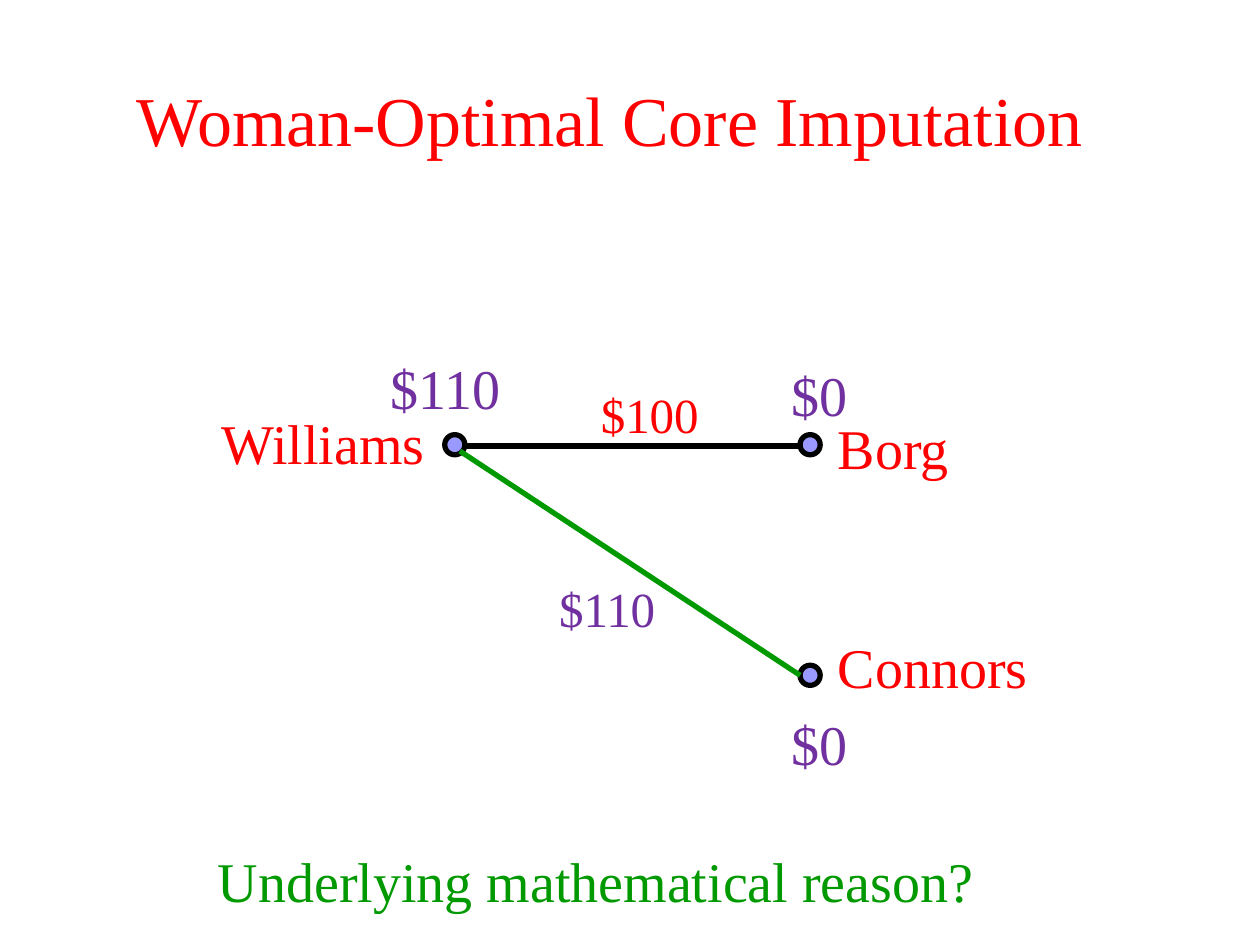
from pptx import Presentation
from pptx.dml.color import RGBColor
from pptx.enum.shapes import MSO_CONNECTOR as Connector, MSO_SHAPE as Shape
from pptx.enum.text import MSO_ANCHOR as Anchor, MSO_AUTO_SIZE as AutoSize, PP_ALIGN as Align
from pptx.oxml.ns import qn
from pptx.util import Inches, Pt
from lxml import etree

RED = RGBColor(0xFF, 0x00, 0x00)
PURPLE = RGBColor(0x70, 0x30, 0xA0)
GREEN = RGBColor(0x00, 0x99, 0x00)
BLACK = RGBColor(0x00, 0x00, 0x00)
LAVENDER = RGBColor(0x99, 0x99, 0xFF)


def write(frame, text, size=32, color=RED, align=Align.LEFT, font="Times New Roman"):
    para = frame.paragraphs[0]
    para.alignment = align
    span = para.add_run()
    span.text = text
    span.font.name = font
    span.font.size = Pt(size)
    span.font.color.rgb = color


class GraphPage:
    """Holds the slide and the style of its graph."""

    node_size = 0.16
    line_width = Pt(3)

    def __init__(self, deck):
        self.page = deck.slides.add_slide(deck.slide_layouts[5])

    def title(self, text, left, top, width, height):
        box = self.page.shapes.title
        box.left, box.top = Inches(left), Inches(top)
        box.width, box.height = Inches(width), Inches(height)
        box.text_frame.vertical_anchor = Anchor.MIDDLE
        write(box.text_frame, text, size=40, align=Align.CENTER)

    def node(self, left, top):
        size = Inches(self.node_size)
        dot = self.page.shapes.add_shape(Shape.OVAL, Inches(left), Inches(top), size, size)
        dot.shadow.inherit = False
        dot.fill.solid()
        dot.fill.fore_color.rgb = LAVENDER
        dot.line.color.rgb = BLACK
        dot.line.width = self.line_width

    def edge(self, start, end, color):
        points = [Inches(value) for value in (*start, *end)]
        line = self.page.shapes.add_connector(Connector.STRAIGHT, *points)
        line.line.color.rgb = color
        line.line.width = self.line_width
        etree.SubElement(line._element.spPr, qn("a:effectLst"))

    def label(self, text, left, top, width, height=0.64, **style):
        box = self.page.shapes.add_textbox(
            Inches(left), Inches(top), Inches(width), Inches(height))
        box.text_frame.word_wrap = False
        box.text_frame.auto_size = AutoSize.SHAPE_TO_FIT_TEXT
        write(box.text_frame, text, **style)


def main():
    deck = Presentation()
    deck.slide_width, deck.slide_height = Inches(10), Inches(7.5)
    graph = GraphPage(deck)
    graph.title("Woman-Optimal Core Imputation", 0.34, 0.19, 9, 1.5)

    woman_x, man_x = 3.53, 6.35
    upper_y, lower_y = 3.45, 5.28
    for left, top in ((woman_x, upper_y), (man_x, lower_y), (man_x, upper_y)):
        graph.node(left, top)
    graph.edge((3.69, 3.54), (6.37, 3.54), BLACK)
    graph.edge((3.65, 3.58), (6.35, 5.36), GREEN)

    # Edge values
    graph.label("$100", 4.67, 3, 0.99, 0.57, size=28)
    graph.label("$110", 4.34, 4.54, 0.97, 0.57, size=28, color=PURPLE)

    # Players
    name_x = man_x + 0.2
    graph.label("Williams", 1.66, 3.19, 1.83)
    graph.label("Borg", name_x, 3.23, 1.09)
    graph.label("Connors", name_x, 4.97, 1.72)

    # Payoffs
    graph.label("$110", 3, 2.76, 1.08, color=PURPLE)
    for top in (5.58, 2.81):
        graph.label("$0", 6.18, top, 0.65, color=PURPLE)

    graph.label("Underlying mathematical reason?", 1.63, 6.67, 6.26, color=GREEN)
    deck.save("out.pptx")


if __name__ == "__main__":
    main()
